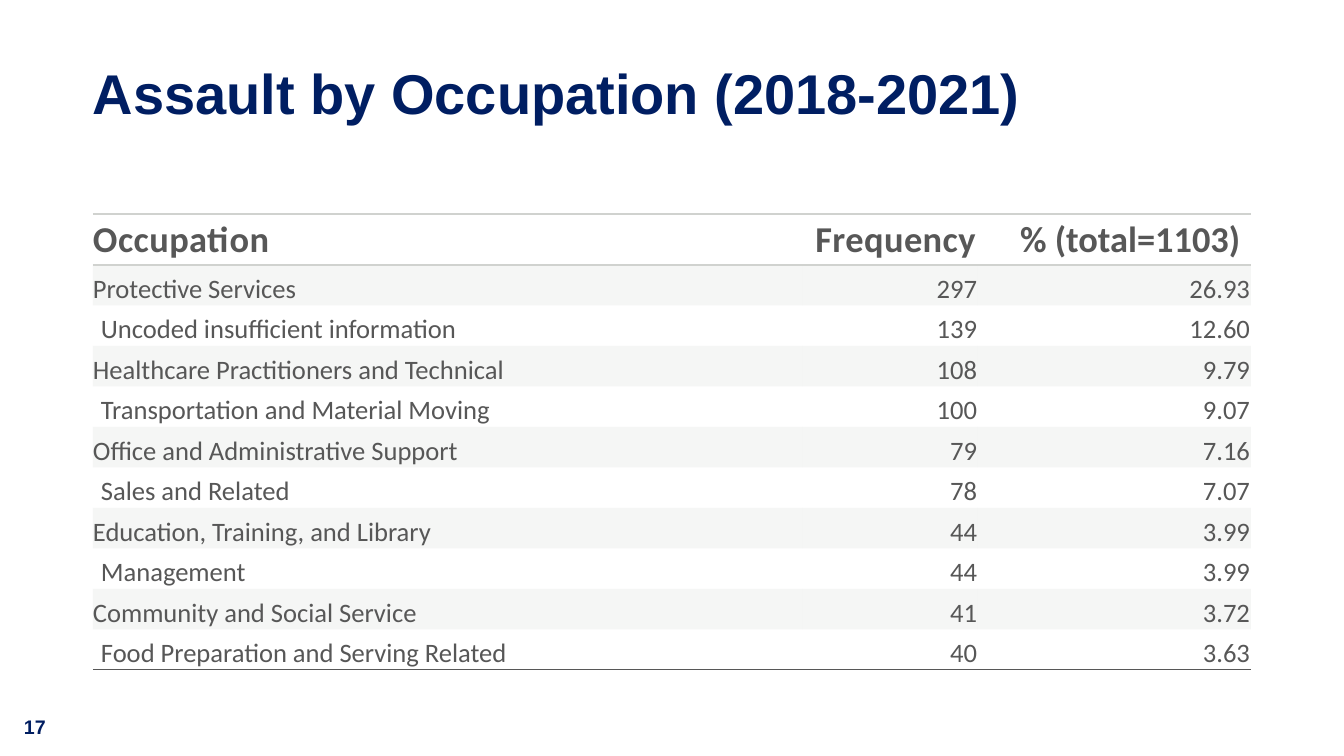
import pptx
import pptx.dml.color
import pptx.enum.text
import pptx.oxml
import pptx.oxml.ns
import pptx.util

EMU_PER_PX = 914400 / 100.8
COLORS = {"title": "001E62", "page": "001E61", "text": "575757", "rule": "D0D2CF"}
PLAIN_TABLE_STYLE = "{2D5ABB26-0587-4C30-8999-92F81FD0307C}"
ALIGN = pptx.enum.text.PP_ALIGN
ANCHOR = pptx.enum.text.MSO_ANCHOR

HEADINGS = ("Occupation", "Frequency", "% (total=1103) ")
OCCUPATIONS = (
    ("Protective Services", "297", "26.93"),
    ("Uncoded insufficient information", "139", "12.60"),
    ("Healthcare Practitioners and Technical", "108", "9.79"),
    ("Transportation and Material Moving", "100", "9.07"),
    ("Office and Administrative Support", "79", "7.16"),
    ("Sales and Related", "78", "7.07"),
    ("Education, Training, and Library", "44", "3.99"),
    ("Management", "44", "3.99"),
    ("Community and Social Service", "41", "3.72"),
    ("Food Preparation and Serving Related", "40", "3.63"),
)


def px(length):
    return pptx.util.Emu(round(length * EMU_PER_PX))


def set_font(paragraph, name, size, color, bold):
    font = paragraph.font
    font.name, font.size, font.bold = name, pptx.util.Pt(size), bold
    font.color.rgb = pptx.dml.color.RGBColor.from_string(COLORS[color])


def set_margins(target, left, top, right, bottom):
    target.margin_left, target.margin_top = px(left), px(top)
    target.margin_right, target.margin_bottom = px(right), px(bottom)


def add_border(cell, side, color):
    """Draw a 1 pt border; side is lnT or lnB. Call before setting the fill."""
    cell._tc.get_or_add_tcPr().append(pptx.oxml.parse_xml(
        f'<a:{side} {pptx.oxml.ns.nsdecls("a")} w="12700"><a:solidFill>'
        f'<a:srgbClr val="{COLORS[color]}"/></a:solidFill></a:{side}>'))


def shade(cell):
    """Fill a cell with the rule colour at 20 % opacity."""
    cell.fill.solid()
    cell.fill.fore_color.rgb = pptx.dml.color.RGBColor.from_string(COLORS["rule"])
    color = cell._tc.tcPr.find(".//" + pptx.oxml.ns.qn("a:srgbClr"))
    color.append(pptx.oxml.parse_xml(
        f'<a:alpha {pptx.oxml.ns.nsdecls("a")} val="20000"/>'))


def add_title(slide, left, top, width, height):
    frame = slide.shapes.add_textbox(px(left), px(top), px(width), px(height)).text_frame
    frame.word_wrap = True
    frame.vertical_anchor = ANCHOR.MIDDLE
    set_margins(frame, 0, 0, 0, 0)
    title = frame.paragraphs[0]
    title.text = "Assault by Occupation (2018-2021)"
    title.line_spacing = 0.9
    set_font(title, "Arial", 40, "title", True)


def add_page_number(slide, left, top, width, height):
    frame = slide.shapes.add_textbox(px(left), px(top), px(width), px(height)).text_frame
    frame.word_wrap = True
    number = frame.paragraphs[0]
    number.text = "17"
    set_font(number, "Arial", 14, "page", True)


def fill_heading(cell, heading, letter_spacing):
    cell.vertical_anchor = ANCHOR.MIDDLE
    set_margins(cell, 0, 1, 2, 0)
    add_border(cell, "lnT", "rule")
    add_border(cell, "lnB", "rule")
    cell.fill.background()
    paragraph = cell.text_frame.paragraphs[0]
    paragraph.text = heading
    set_font(paragraph, "Calibri", 26, "text", True)
    paragraph.runs[0]._r.get_or_add_rPr().set("spc", str(letter_spacing))


def fill_value(cell, value, shaded, last):
    cell.vertical_anchor = ANCHOR.BOTTOM
    set_margins(cell, 0 if shaded else 8, 1, 1, 0)
    if last:
        add_border(cell, "lnB", "text")
    if shaded:
        shade(cell)
    else:
        cell.fill.background()
    paragraph = cell.text_frame.paragraphs[0]
    paragraph.text = value
    set_font(paragraph, "Calibri", 19, "text", False)


def add_occupation_table(slide, left, top, width, height):
    frame = slide.shapes.add_table(len(OCCUPATIONS) + 1, len(HEADINGS),
                                   px(left), px(top), px(width), px(height))
    table = frame.table
    table._tbl.tblPr.find(pptx.oxml.ns.qn("a:tableStyleId")).text = PLAIN_TABLE_STYLE
    table.horz_banding = False

    frequency_width, percent_width, heading_height = 175, 273, 51
    widths = (width - frequency_width - percent_width, frequency_width, percent_width)
    for column, column_width in zip(table.columns, widths):
        column.width = px(column_width)
    for row in table.rows:
        row.height = px((height - heading_height) / len(OCCUPATIONS))
    table.rows[0].height = px(heading_height)

    for col, heading in enumerate(HEADINGS):
        fill_heading(table.cell(0, col), heading, 0 if col == 2 else 30)
    for row, values in enumerate(OCCUPATIONS, start=1):
        for col, value in enumerate(values):
            fill_value(table.cell(row, col), value, row % 2 == 1, row == len(OCCUPATIONS))
    for cell in table.iter_cells():
        cell.text_frame.paragraphs[0].alignment = ALIGN.RIGHT
    for row in range(len(table.rows)):
        table.cell(row, 0).text_frame.paragraphs[0].alignment = ALIGN.LEFT


def main():
    presentation = pptx.Presentation()
    presentation.slide_width, presentation.slide_height = px(1344), px(756)
    slide = presentation.slides.add_slide(presentation.slide_layouts[6])
    add_page_number(slide, 14, 710, 67, 34)
    add_title(slide, 93, 37, 1158, 119)
    add_occupation_table(slide, 93, 214, 1158, 456)
    presentation.save("out.pptx")


if __name__ == "__main__":
    main()
